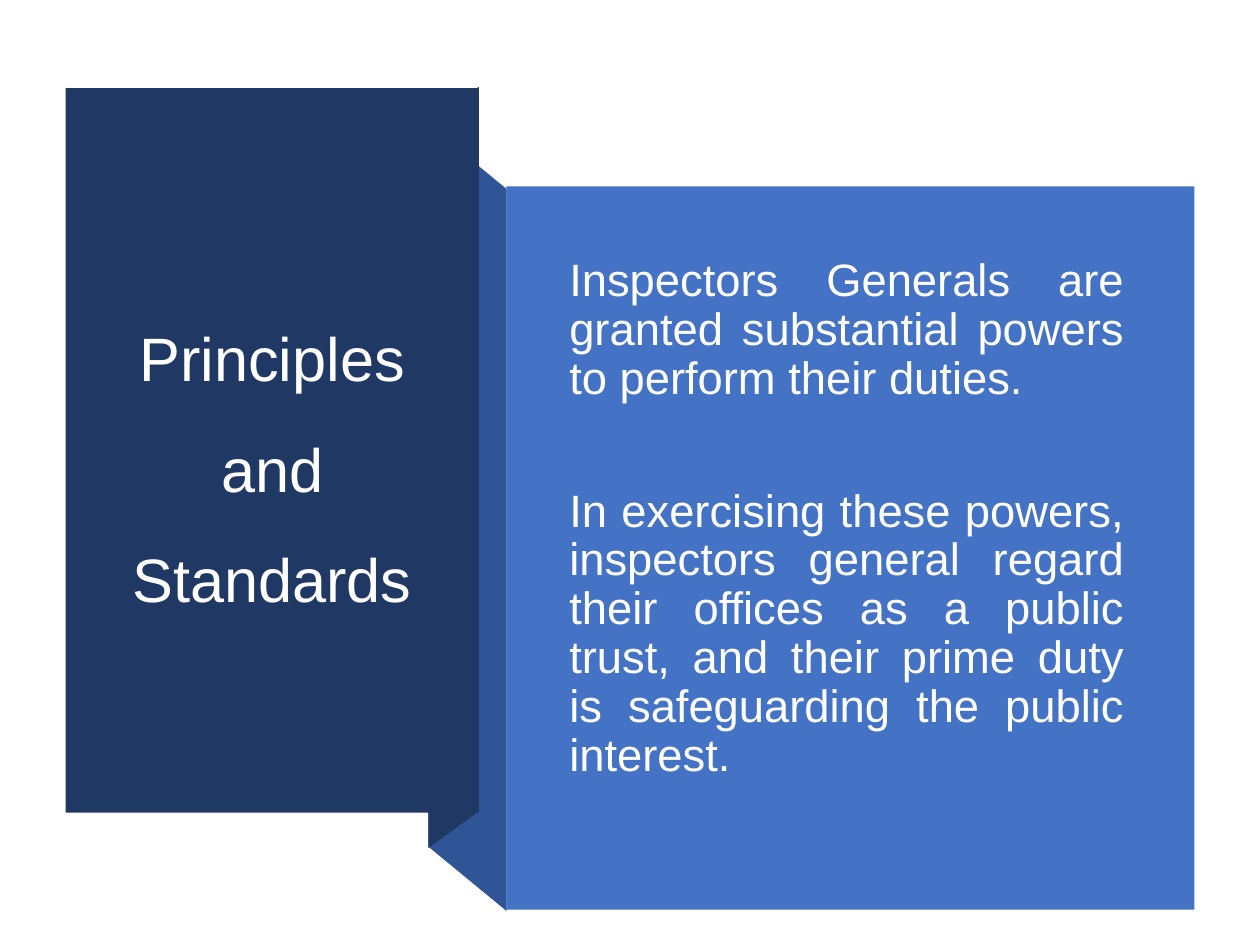
import pptx
import pptx.util
import pptx.dml.color
import pptx.enum.shapes
import pptx.enum.text

Inches, Pt = pptx.util.Inches, pptx.util.Pt
ALIGN = pptx.enum.text.PP_ALIGN
ANCHOR = pptx.enum.text.MSO_ANCHOR

NAVY, MID, BLUE, WHITE = "203864", "2F5597", "4472C4", "FFFFFF"

TITLE = ["Principles and Standards"]
BODY = [
    "Inspectors Generals are granted substantial powers to perform their duties.",
    "In exercising these powers, inspectors general regard their offices as a "
    "public trust, and their prime duty is safeguarding the public interest.",
]

# Ribbon parts, back to front: colour and corners
FOLDS = [
    (MID, [(4.02, 7.23), (3.4, 6.72), (3.4, 0.99), (4.02, 1.5)]),
    (NAVY, [(3.8, 6.44), (3.4, 6.73), (3.4, 0.98), (3.8, 0.69)]),
]
PANELS = [
    (NAVY, (0.52, 0.7, 3.28, 5.75)),
    (BLUE, (4.02, 1.48, 5.46, 5.74)),
]


def rgb(code):
    return pptx.dml.color.RGBColor.from_string(code)


def paint(shape, color):
    shape.shadow.inherit = False
    shape.fill.solid()
    shape.fill.fore_color.rgb = rgb(color)
    shape.line.fill.background()


def fold(slide, color, points):
    corners = [(Inches(x), Inches(y)) for x, y in points]
    build = slide.shapes.build_freeform(*corners[0])
    build.add_line_segments(corners[1:], close=True)
    paint(build.convert_to_shape(), color)


def panel(slide, color, box):
    kind = pptx.enum.shapes.MSO_SHAPE.RECTANGLE
    paint(slide.shapes.add_shape(kind, *map(Inches, box)), color)


def write(slide, box, lines, size, align, spacing, anchor, top=0.05, gap=0):
    frame = slide.shapes.add_textbox(*map(Inches, box)).text_frame
    frame.word_wrap = True
    frame.vertical_anchor = anchor
    frame.margin_top = Inches(top)
    for i, line in enumerate(lines):
        para = frame.add_paragraph() if i else frame.paragraphs[0]
        para.alignment = align
        para.line_spacing = spacing
        if i:
            para.space_before = Pt(gap)
        run = para.add_run()
        run.text = line
        run.font.name = "Arial"
        run.font.size = Pt(size)
        run.font.color.rgb = rgb(WHITE)


def main():
    deck = pptx.Presentation()
    deck.slide_width, deck.slide_height = Inches(10), Inches(7.5)
    slide = deck.slides.add_slide(deck.slide_layouts[6])
    for color, points in FOLDS:
        fold(slide, color, points)
    for color, box in PANELS:
        panel(slide, color, box)
    write(slide, (0.77, 1.07, 2.78, 4.99), TITLE, 35,
          ALIGN.CENTER, 1.5, ANCHOR.MIDDLE)
    write(slide, (4.42, 1.88, 4.6, 4.74), BODY, 25.9,
          ALIGN.JUSTIFY, 0.9, ANCHOR.TOP, top=0.16, gap=48)
    deck.save("out.pptx")


if __name__ == "__main__":
    main()
